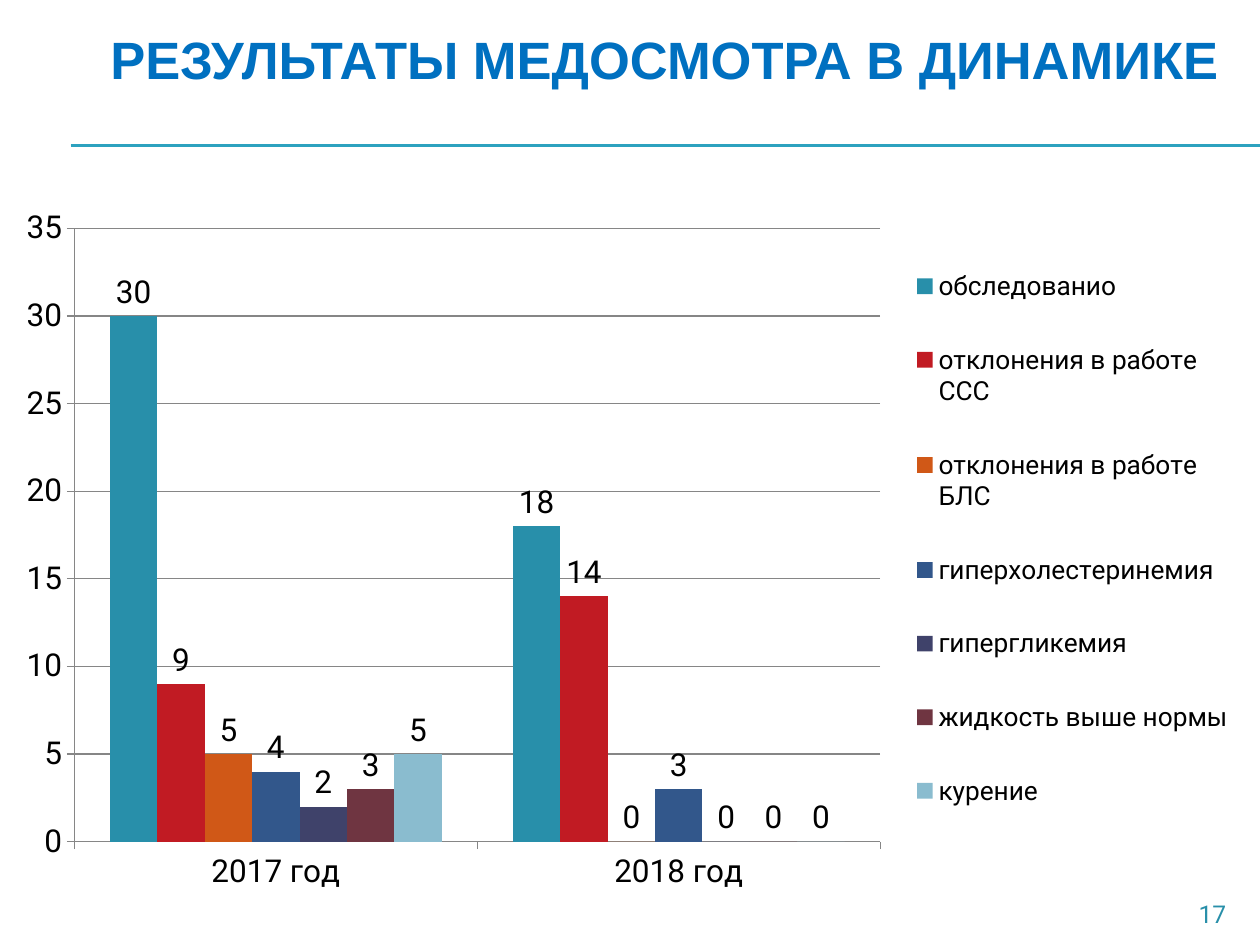
import pptx
import pptx.chart.data
import pptx.dml.color
import pptx.enum.chart
import pptx.enum.shapes
import pptx.enum.text
import pptx.oxml
import pptx.oxml.ns
import pptx.util
from pptx.util import Inches

COLORS = {
    "title": "0070C0",
    "rule": "2DA2BF",
    "number": "288FA9",
    "text": "000000",
    "grid": "868686",
}
YEARS = ["2017 год", "2018 год"]
FINDINGS = [
    ("обследованио", (30, 18), "288FAA"),
    ("отклонения в работе ССС", (9, 14), "C11B23"),
    ("отклонения в работе БЛС", (5, 0), "D05817"),
    ("гиперхолестеринемия", (4, 3), "32578B"),
    ("гипергликемия", (2, 0), "3F426A"),
    ("жидкость выше нормы", (3, 0), "6F3541"),
    ("курение", (5, 0), "8ABCCF"),
]


def rgb(value):
    """Turn a hex string into a colour."""
    return pptx.dml.color.RGBColor.from_string(value)


def style_font(font, name, size, color, bold=False):
    """Set the face, size, colour and weight of a font."""
    font.name = name
    font.size = pptx.util.Pt(size)
    font.bold = bold
    font.color.rgb = rgb(color)


def add_line_of_text(slide, box, text, align, anchor, **font):
    """Place one line of text in a box without margins."""
    frame = slide.shapes.add_textbox(*map(Inches, box)).text_frame
    frame.word_wrap = True
    frame.vertical_anchor = anchor
    frame.margin_left = frame.margin_right = Inches(0.1)
    frame.margin_top = frame.margin_bottom = 0
    paragraph = frame.paragraphs[0]
    paragraph.alignment = align
    run = paragraph.add_run()
    run.text = text
    style_font(run.font, **font)


def add_header_rule(slide, box):
    """Draw the two thin lines along the top and bottom of a box."""
    left, top, width, height = box
    for y in (top, top + height):
        rule = slide.shapes.add_connector(
            pptx.enum.shapes.MSO_CONNECTOR.STRAIGHT,
            Inches(left), Inches(y), Inches(left + width), Inches(y))
        rule.line.color.rgb = rgb(COLORS["rule"])
        rule.line.width = pptx.util.Pt(0.75)
        properties = rule._element.spPr
        properties.append(pptx.oxml.parse_xml(
            f'<a:effectLst {pptx.oxml.ns.nsdecls("a")}/>'))


def manual_layout(x, y, w, h, inner=False):
    """Return a chart layout given in fractions of the chart."""
    target = '<c:layoutTarget val="inner"/>' if inner else ""
    parts = "".join(f'<c:{key} val="{value}"/>' for key, value in (
        ("xMode", "edge"), ("yMode", "edge"),
        ("x", x), ("y", y), ("w", w), ("h", h)))
    return pptx.oxml.parse_xml(
        f'<c:layout {pptx.oxml.ns.nsdecls("c")}>'
        f'<c:manualLayout>{target}{parts}</c:manualLayout></c:layout>')


def replace_layout(parent, position, layout):
    """Put a layout into a chart part in place of any it has."""
    for old in parent.findall(pptx.oxml.ns.qn("c:layout")):
        parent.remove(old)
    parent.insert(position, layout)


def style_axis(axis):
    """Give an axis its grey line and crossing ticks."""
    axis.major_tick_mark = pptx.enum.chart.XL_TICK_MARK.OUTSIDE
    axis.format.line.color.rgb = rgb(COLORS["grid"])
    axis.format.line.width = pptx.util.Pt(0.75)


def add_results_chart(slide, box):
    """Place the clustered columns of check-up results by year."""
    results = pptx.chart.data.CategoryChartData()
    results.categories = YEARS
    for name, counts, _ in FINDINGS:
        results.add_series(name, counts)
    chart = slide.shapes.add_chart(
        pptx.enum.chart.XL_CHART_TYPE.COLUMN_CLUSTERED,
        *map(Inches, box), results).chart
    chart.has_title = False
    style_font(chart.font, "Roboto", 18, COLORS["text"])

    columns = chart.plots[0]
    columns.vary_by_categories = False
    columns.gap_width = 150
    columns.overlap = 0
    for series, (_, _, color) in zip(columns.series, FINDINGS):
        series.format.fill.solid()
        series.format.fill.fore_color.rgb = rgb(color)
        series.data_labels.show_value = True
        series.data_labels.position = (
            pptx.enum.chart.XL_LABEL_POSITION.OUTSIDE_END)

    style_axis(chart.category_axis)
    counts_axis = chart.value_axis
    style_axis(counts_axis)
    counts_axis.minimum_scale = 0
    counts_axis.maximum_scale = 35
    counts_axis.major_unit = 5
    counts_axis.has_major_gridlines = True
    gridline = counts_axis.major_gridlines.format.line
    gridline.color.rgb = rgb(COLORS["grid"])
    gridline.width = pptx.util.Pt(0.75)

    chart.has_legend = True
    legend = chart.legend
    legend.position = pptx.enum.chart.XL_LEGEND_POSITION.RIGHT
    legend.include_in_layout = False
    style_font(legend.font, "Roboto", 15, COLORS["text"])
    replace_layout(legend._element, 1, manual_layout(0.73, 0.05, 0.27, 0.87))
    replace_layout(chart._chartSpace.chart.plotArea, 0,
                   manual_layout(0.06, 0.05, 0.65, 0.86, inner=True))


def main():
    """Build the slide and save it."""
    presentation = pptx.Presentation()
    presentation.slide_width = Inches(10)
    presentation.slide_height = Inches(7.5)
    slide = presentation.slides.add_slide(presentation.slide_layouts[6])
    align = pptx.enum.text.PP_ALIGN
    anchor = pptx.enum.text.MSO_ANCHOR
    add_header_rule(slide, (0.56, 1.15, 9.44, 0.01))
    add_line_of_text(slide, (0.51, 7.12, 9.32, 0.27), "17",
                     align.RIGHT, anchor.MIDDLE,
                     name="Roboto", size=14, color=COLORS["number"])
    add_results_chart(slide, (0, 1.53, 9.84, 5.66))
    add_line_of_text(slide, (0.55, 0.16, 9.45, 0.61),
                     "РЕЗУЛЬТАТЫ МЕДОСМОТРА В ДИНАМИКЕ",
                     align.CENTER, anchor.MIDDLE,
                     name="Arial", size=30, color=COLORS["title"], bold=True)
    presentation.save("out.pptx")


if __name__ == "__main__":
    main()
